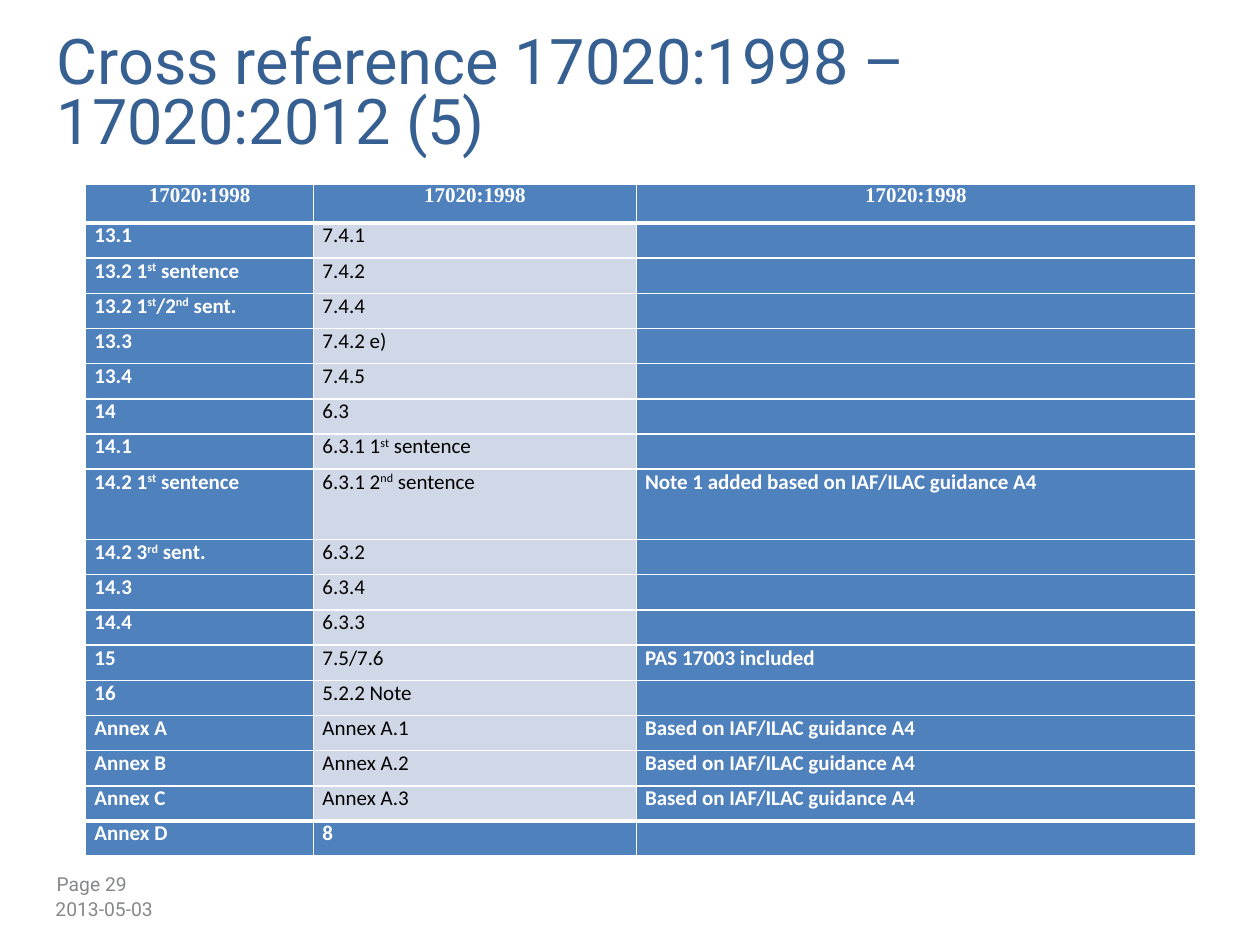
"""Build the cross-reference slide for 17020:1998 and 17020:2012, part 5."""
from lxml import etree
from pptx import Presentation, util as u
from pptx.dml.color import RGBColor
from pptx.enum import text
from pptx.oxml.ns import qn

THEME = {
    "blue": "4F81BD", "pale": "D0D8E8", "white": "FFFFFF", "black": "000000",
    "navy": "376092", "grey": "868789", "head": "Times New Roman",
    "body": "Calibri", "sans": "Roboto", "title": 36, "cell": 12, "foot": 11,
}
ROWS = [
    ("17020:1998",) * 3,
    ("13.1", "7.4.1", ""),
    ("13.2 1^st^ sentence", "7.4.2", ""),
    ("13.2 1^st^/2^nd^ sent.", "7.4.4", ""),
    ("13.3", "7.4.2 e)", ""),
    ("13.4", "7.4.5", ""),
    ("14", "6.3", ""),
    ("14.1", "6.3.1 1^st^ sentence", ""),
    ("14.2 1^st^ sentence", "6.3.1 2^nd^ sentence",
     "Note 1 added based on IAF/ILAC guidance A4"),
    ("14.2 3^rd^ sent.", "6.3.2", ""),
    ("14.3", "6.3.4", ""),
    ("14.4", "6.3.3", ""),
    ("15", "7.5/7.6", "PAS 17003 included"),
    ("16", "5.2.2 Note", ""),
    ("Annex A", "Annex A.1", "Based on IAF/ILAC guidance A4"),
    ("Annex B", "Annex A.2", "Based on IAF/ILAC guidance A4"),
    ("Annex C", "Annex A.3", "Based on IAF/ILAC guidance A4"),
    ("Annex D", "8", ""),
]
LAST = len(ROWS) - 1
TALL = 8


def paint(font, face, size, tint, bold=False):
    """Set face, size, colour and weight of a font."""
    font.name, font.size, font.bold = THEME[face], u.Pt(THEME[size]), bold
    font.color.rgb = RGBColor.from_string(THEME[tint])


def edge(cell, side, width):
    """Draw one white border of a cell."""
    line = etree.SubElement(cell._tc.get_or_add_tcPr(), qn("a:ln" + side), w=str(u.Pt(width)))
    fill = etree.SubElement(line, qn("a:solidFill"))
    etree.SubElement(fill, qn("a:srgbClr"), val=THEME["white"])


deck = Presentation()
deck.slide_width, deck.slide_height = u.Inches(10), u.Inches(7.5)
slide = deck.slides.add_slide(deck.slide_layouts[5])

title = slide.shapes.title
title.left, title.top, title.width, title.height = map(u.Inches, (0.45, 0.3, 9.05, 1.25))
title.text_frame.text = "Cross reference 17020:1998 – 17020:2012 (5)"
head = title.text_frame.paragraphs[0]
head.alignment, head.line_spacing = text.PP_ALIGN.LEFT, u.Pt(34)
paint(head.runs[0].font, "sans", "title", "navy")

frame = slide.shapes.add_table(len(ROWS), 3, *map(u.Inches, (0.68, 1.46, 8.82, 5.34)))
table = frame.table
table.horz_banding = False
for col, wide in zip(table.columns, (1.81, 2.56, 4.44)):
    col.width = u.Inches(wide)
top = u.Inches(0.31)
unit = (u.Inches(5.34) - top) // len(ROWS)

for r, row in enumerate(ROWS):
    table.rows[r].height = top if r == 0 else unit * 2 if r == TALL else unit
    for c, words in enumerate(row):
        cell = table.cell(r, c)
        pale = c == 1 and 0 < r < LAST
        cell.margin_left = cell.margin_right = u.Inches(0.07)
        cell.margin_top = cell.margin_bottom = 0
        edge(cell, "L", 1)
        edge(cell, "R", 1)
        edge(cell, "T", 3 if r in (1, LAST) else 1)
        edge(cell, "B", 3 if r in (0, LAST - 1) else 1)
        cell.fill.solid()
        cell.fill.fore_color.rgb = RGBColor.from_string(THEME["pale" if pale else "blue"])
        para = cell.text_frame.paragraphs[0]
        if r == 0:
            para.alignment = text.PP_ALIGN.CENTER
        if not words:
            etree.SubElement(para._p, qn("a:endParaRPr"), sz=str(THEME["cell"] * 100))
            continue
        for n, part in enumerate(words.split("^")):
            run = para.add_run()
            run.text = part
            paint(run.font, "body" if r else "head", "cell",
                  "black" if pale else "white", not pale)
            if n % 2:
                run.font._element.set("baseline", "30000")

for words, place in (("Page 29", (0.45, 6.92, 2.33, 0.4)),
                     ("2013-05-03", (0.44, 7.12, 6.15, 0.36))):
    foot = slide.shapes.add_textbox(*map(u.Inches, place)).text_frame
    foot.text = words
    paint(foot.paragraphs[0].runs[0].font, "sans", "foot", "grey")

for shape in slide.shapes:
    if shape.has_text_frame:
        body = shape.text_frame
        body.margin_left = body.margin_right = body.margin_top = body.margin_bottom = 0
        body.word_wrap, body.auto_size = True, text.MSO_AUTO_SIZE.NONE
        body.vertical_anchor = text.MSO_ANCHOR.TOP

deck.save("out.pptx")
